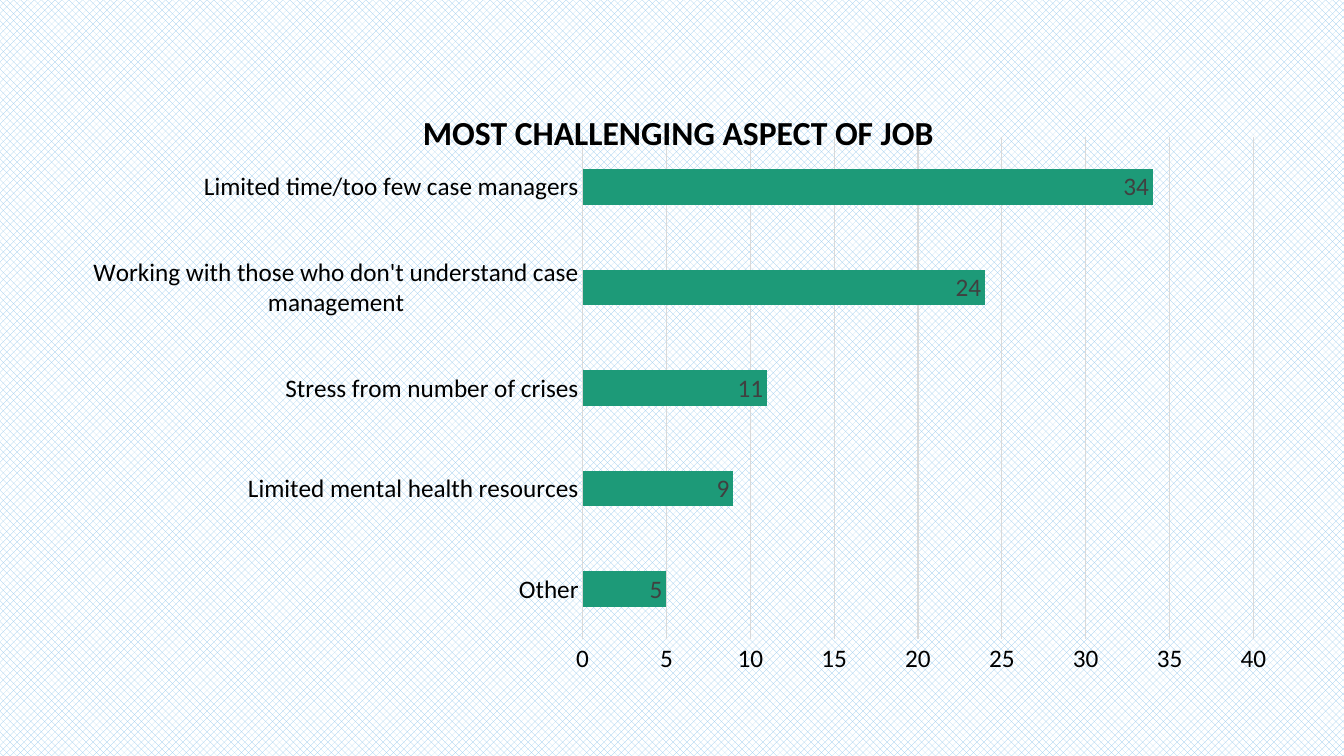
from lxml import etree
from pptx import Presentation
from pptx.chart.data import CategoryChartData
from pptx.dml.color import RGBColor
from pptx.enum.chart import XL_CHART_TYPE, XL_LABEL_POSITION, XL_TICK_MARK
from pptx.enum.dml import MSO_PATTERN
from pptx.util import Emu, Pt

BAR_CLUSTERED = XL_CHART_TYPE.BAR_CLUSTERED
INSIDE_END = XL_LABEL_POSITION.INSIDE_END
NO_TICK = XL_TICK_MARK.NONE
HALF_DOTS = MSO_PATTERN.PERCENT_50
CHART_NS = "http://schemas.openxmlformats.org/drawingml/2006/chart"
EMU_PER_PX = 914400 / 100.8
COLORS = {
    "ink": "000000",
    "label": "404040",
    "rule": "D9D9D9",
    "bar": "1D9A78",
    "paper": "FFFFFF",
    "weave": "94C8ED",
}
CHALLENGES = [
    ("Other", 5),
    ("Limited mental health resources", 9),
    ("Stress from number of crises", 11),
    ("Working with those who don't understand case management", 24),
    ("Limited time/too few case managers", 34),
]


def px(length):
    return Emu(round(length * EMU_PER_PX))


def color(name):
    return RGBColor.from_string(COLORS[name])


def style_font(font, size, ink="ink", bold=False, face="Calibri"):
    font.name = face
    font.size = Pt(size)
    font.bold = bold
    font.color.rgb = color(ink)


def write_text(frame, text, **text_format):
    run = frame.paragraphs[0].add_run()
    run.text = text
    style_font(run.font, **text_format)


def manual_layout(**settings):
    layout = etree.Element(f"{{{CHART_NS}}}layout")
    manual = etree.SubElement(layout, f"{{{CHART_NS}}}manualLayout")
    for tag, value in settings.items():
        etree.SubElement(manual, f"{{{CHART_NS}}}{tag}").set("val", str(value))
    return layout


def replace_layout(parent, layout, index):
    for old in parent.findall(f"{{{CHART_NS}}}layout"):
        parent.remove(old)
    parent.insert(index, layout)


class SurveySlide:
    def __init__(self, slide, axis_size=18, title_size=24):
        self.slide = slide
        self.axis_size = axis_size
        self.title_size = title_size

    def background(self):
        fill = self.slide.background.fill
        fill.patterned()
        fill.pattern = HALF_DOTS
        fill.fore_color.rgb = color("weave")
        fill.back_color.rgb = color("paper")

    def rule(self, line):
        line.color.rgb = color("rule")
        line.width = Pt(0.75)

    def axis(self, axis):
        axis.major_tick_mark = NO_TICK
        axis.minor_tick_mark = NO_TICK
        style_font(axis.tick_labels.font, self.axis_size)

    def bar_chart(self, title, answers, left, top, width, height):
        counts = CategoryChartData()
        counts.categories = [answer for answer, _ in answers]
        counts.add_series("Series 1", [count for _, count in answers])
        chart = self.slide.shapes.add_chart(
            BAR_CLUSTERED, px(left), px(top), px(width), px(height), counts
        ).chart
        style_font(chart.font, 10)
        chart.has_legend = False
        write_text(chart.chart_title.text_frame, title, size=self.title_size, bold=True)
        self.axis(chart.category_axis)
        chart.category_axis.has_major_gridlines = False
        self.rule(chart.category_axis.format.line)
        self.axis(chart.value_axis)
        chart.value_axis.minimum_scale = 0
        chart.value_axis.maximum_scale = 40
        chart.value_axis.major_unit = 5
        chart.value_axis.format.line.fill.background()
        self.rule(chart.value_axis.major_gridlines.format.line)
        self.bars(chart.plots[0])
        title_layout = manual_layout(xMode="edge", yMode="edge", x=0.288, y=0.045)
        replace_layout(chart.chart_title._element, title_layout, 1)
        plot_layout = manual_layout(
            layoutTarget="inner", xMode="edge", yMode="edge",
            x=0.425, y=0.099, w=0.554, h=0.834,
        )
        replace_layout(chart.plots[0]._element.getparent(), plot_layout, 0)

    def bars(self, plot):
        plot.gap_width = 182
        plot.vary_by_categories = False
        answers = plot.series[0]
        answers.format.fill.solid()
        answers.format.fill.fore_color.rgb = color("bar")
        labels = answers.data_labels
        labels.show_value = True
        labels.position = INSIDE_END
        style_font(labels.font, self.axis_size, "label")


def main():
    deck = Presentation()
    deck.slide_width, deck.slide_height = px(1344), px(756)
    survey = SurveySlide(deck.slides.add_slide(deck.slide_layouts[6]))
    survey.background()
    survey.bar_chart("MOST CHALLENGING ASPECT OF JOB", CHALLENGES, 68, 77, 1211, 603)
    deck.save("out.pptx")


if __name__ == "__main__":
    main()
